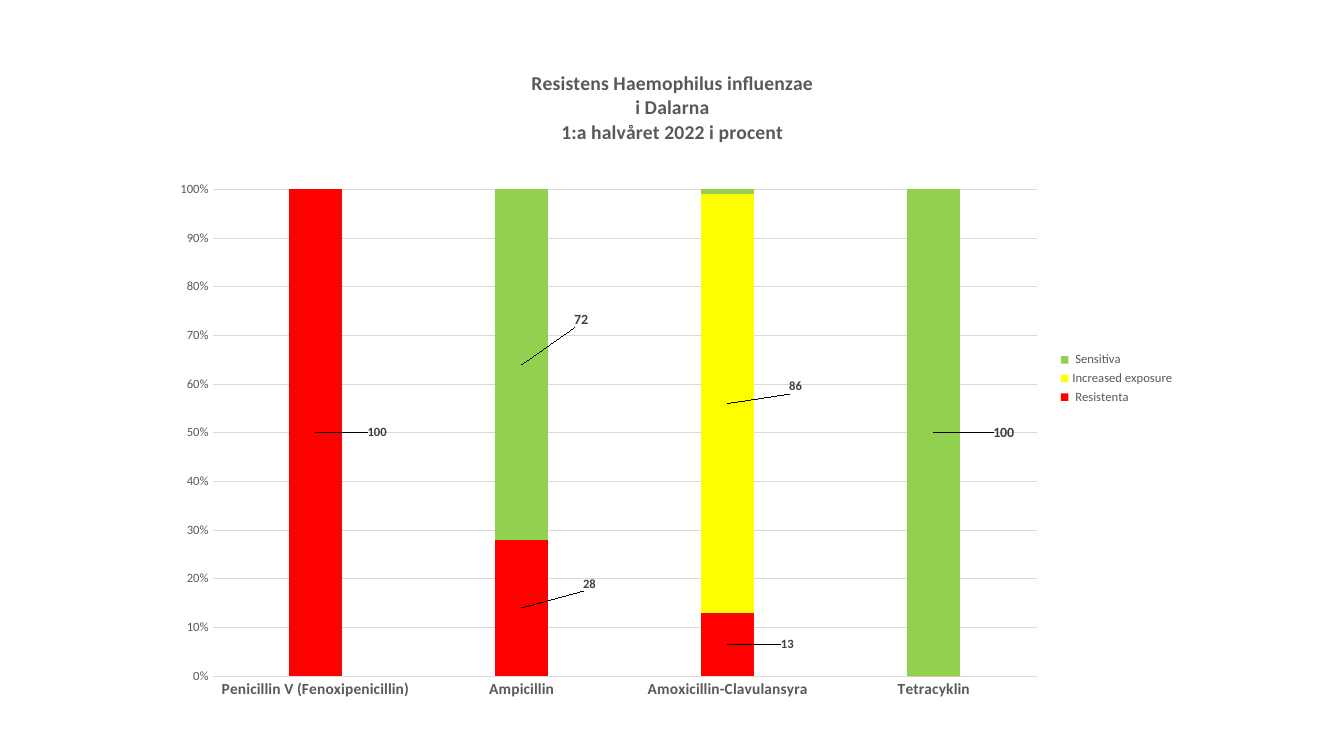
from dataclasses import dataclass, field

from pptx import Presentation
from pptx import util as u
from pptx.chart import data as chart_data
from pptx.dml.color import RGBColor
from pptx.enum import chart as kinds
from pptx.enum import text
from pptx.oxml import parse_xml
from pptx.oxml.ns import nsdecls


@dataclass(frozen=True)
class Theme:
    font: str = "Calibri"
    ink: str = "595959"
    label_ink: str = "404040"
    rule: str = "D9D9D9"
    rule_width: float = 0.75
    title_size: int = 14
    category_size: int = 11
    small_size: int = 9


@dataclass(frozen=True)
class Outcome:
    name: str
    color: str
    values: tuple[int, ...]
    label_size: int
    # Category index -> label shift, as shares of the chart's width and height
    label_shifts: dict[int, tuple[float, float]] = field(default_factory=dict)


THEME = Theme()
WIDTH, HEIGHT = u.Inches(13.33), u.Inches(7.5)
CHART_SHARES = (0.1185, 0.0573, 0.763, 0.8867)
TITLE_SHARES = (0.36, 0.035)
PLOT_SHARES = (0.052, 0.218, 0.804, 0.726)
TITLE_LINES = ("Resistens Haemophilus influenzae", "i Dalarna", "1:a halvåret 2022 i procent")
CATEGORIES = ("Penicillin V (Fenoxipenicillin)", "Ampicillin",
              "Amoxicillin-Clavulansyra", "Tetracyklin")
OUTCOMES = (
    Outcome(" Resistenta", "FF0000", (100, 28, 13, 0), 9,
            {0: (0.06, 0), 1: (0.066, -0.036), 2: (0.058, 0)}),
    Outcome("Increased exposure", "FFFF00", (0, 0, 86, 0), 9, {2: (0.066, -0.025)}),
    Outcome(" Sensitiva", "92D050", (0, 72, 1, 100), 10,
            {1: (0.058, -0.067), 3: (0.068, 0)}),
)


def format_font(font, size: float, color: str, bold: bool = False) -> None:
    for name, value in {"name": THEME.font, "size": u.Pt(size), "bold": bold}.items():
        setattr(font, name, value)
    font.color.rgb = RGBColor.from_string(color)


def format_rule(line) -> None:
    line.color.rgb = RGBColor.from_string(THEME.rule)
    line.width = u.Pt(THEME.rule_width)


def set_layout(parent, index: int, shares: tuple[float, ...], absolute: bool = True) -> None:
    """Place a chart part by shares of the chart: left, top and optionally width, height."""
    for old in parent.xpath("c:layout"):
        parent.remove(old)
    entries = {}
    if len(shares) == 4:
        entries["layoutTarget"] = "inner"
    if absolute:
        entries |= {"xMode": "edge", "yMode": "edge"}
    entries |= dict(zip("xywh", shares))
    body = "".join(f'<c:{tag} val="{value}"/>' for tag, value in entries.items())
    parent.insert(index, parse_xml(
        f'<c:layout {nsdecls("c")}><c:manualLayout>{body}</c:manualLayout></c:layout>'))


def add_title(chart) -> None:
    frame = chart.chart_title.text_frame
    for number, words in enumerate(TITLE_LINES):
        para = frame.add_paragraph() if number else frame.paragraphs[0]
        para.alignment = text.PP_ALIGN.CENTER
        span = para.add_run()
        span.text = words
        format_font(span.font, THEME.title_size, THEME.ink, bold=True)
    set_layout(chart.element.xpath("c:chart/c:title")[0], 1, TITLE_SHARES)


def format_axes(chart) -> None:
    for axis, size, bold in ((chart.category_axis, THEME.category_size, True),
                             (chart.value_axis, THEME.small_size, False)):
        axis.major_tick_mark = axis.minor_tick_mark = kinds.XL_TICK_MARK.NONE
        format_font(axis.tick_labels.font, size, THEME.ink, bold)
    format_rule(chart.category_axis.format.line)
    values = chart.value_axis
    values.format.line.fill.background()
    values.has_major_gridlines = True
    format_rule(values.major_gridlines.format.line)
    values.minimum_scale, values.maximum_scale, values.major_unit = 0, 1, 0.1
    values.tick_labels.number_format = "0%"
    values.tick_labels.number_format_is_linked = False


def format_series(series, outcome: Outcome) -> None:
    series.format.fill.solid()
    series.format.fill.fore_color.rgb = RGBColor.from_string(outcome.color)
    series.data_labels.show_value = False
    for index, shift in outcome.label_shifts.items():
        label = series.points[index].data_label
        format_font(label.font, outcome.label_size, THEME.label_ink, bold=True)
        element = series.data_labels._element.xpath(f"c:dLbl[c:idx/@val={index}]")[0]
        set_layout(element, 1, shift, absolute=False)


def add_resistance_chart(page) -> None:
    table = chart_data.CategoryChartData()
    table.categories = CATEGORIES
    for outcome in OUTCOMES:
        table.add_series(outcome.name, outcome.values)
    left, top, width, height = CHART_SHARES
    chart = page.shapes.add_chart(
        kinds.XL_CHART_TYPE.COLUMN_STACKED_100, int(left * WIDTH), int(top * HEIGHT),
        int(width * WIDTH), int(height * HEIGHT), table).chart
    format_font(chart.font, 10, "000000")
    add_title(chart)
    format_axes(chart)
    chart.has_legend = True
    chart.legend.position = kinds.XL_LEGEND_POSITION.RIGHT
    chart.legend.include_in_layout = False
    format_font(chart.legend.font, THEME.small_size, THEME.ink)
    plot = chart.plots[0]
    for name, value in {"gap_width": 288, "overlap": 100, "vary_by_categories": False}.items():
        setattr(plot, name, value)
    for series, outcome in zip(plot.series, OUTCOMES):
        format_series(series, outcome)
    set_layout(chart.element.xpath("c:chart/c:plotArea")[0], 0, PLOT_SHARES)


def main() -> None:
    deck = Presentation()
    deck.slide_width, deck.slide_height = WIDTH, HEIGHT
    page = deck.slides.add_slide(deck.slide_layouts.get_by_name("Blank"))
    add_resistance_chart(page)
    deck.save("out.pptx")


if __name__ == "__main__":
    main()
